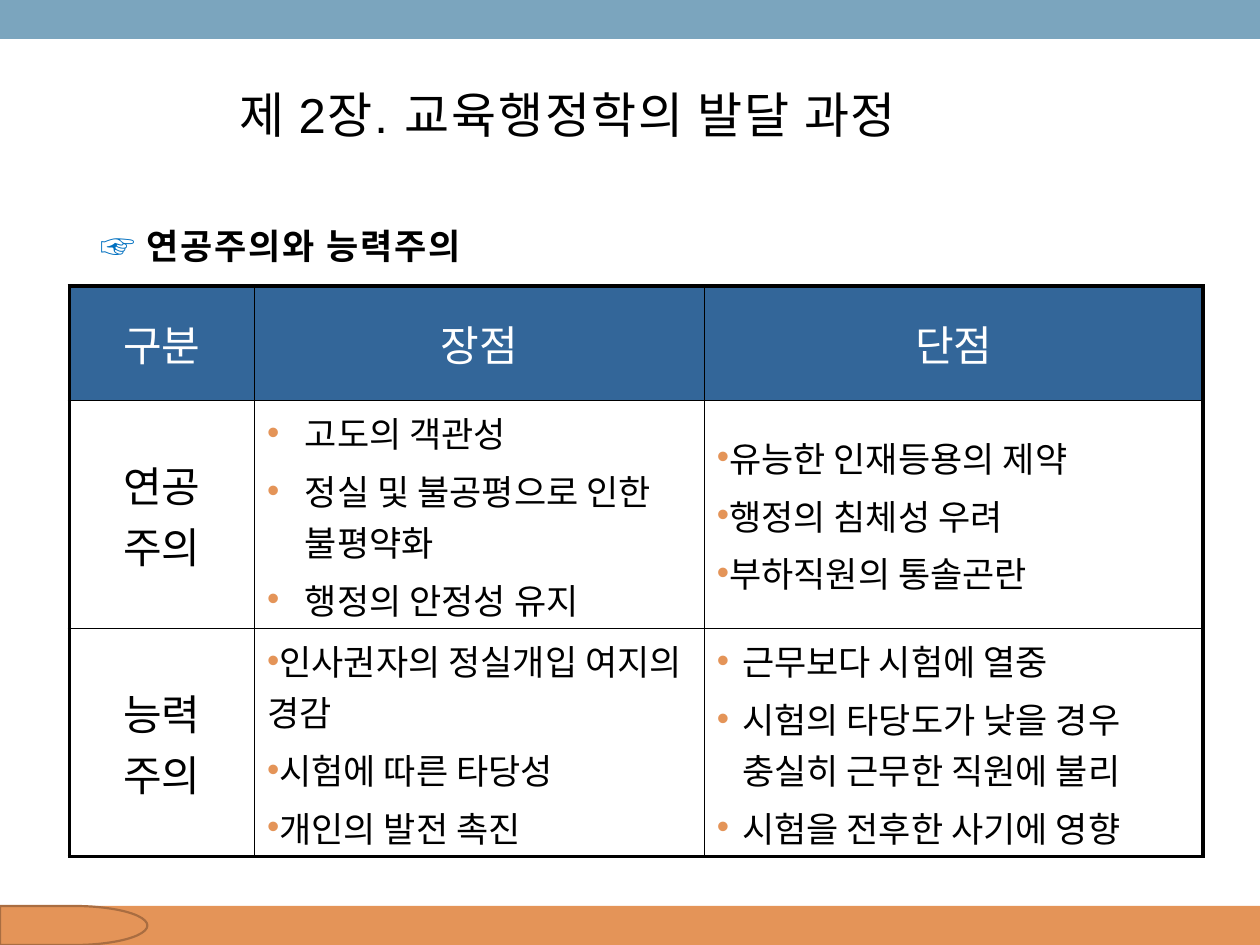
from lxml import etree
from pptx import Presentation
from pptx import util as u
from pptx.dml.color import RGBColor
from pptx.enum import shapes, text
from pptx.oxml.ns import qn

# Content
TITLE = "제 2장. 교육행정학의 발달 과정"
POINTER, SUBTITLE = "☞ ", "연공주의와 능력주의"
HEADERS = ["구분", "장점", "단점"]
# Each row: label, then (hanging indent in inches, bullet points) per column
ROWS = [
    ("연공\v주의",
     (0.3, ["고도의 객관성", "정실 및 불공평으로 인한 불평약화", "행정의 안정성 유지"]),
     (0, ["유능한 인재등용의 제약", "행정의 침체성 우려", "부하직원의 통솔곤란"])),
    ("능력\v주의",
     (0, ["인사권자의 정실개입 여지의 경감", "시험에 따른 타당성", "개인의 발전 촉진"]),
     (0.2, ["근무보다 시험에 열중", "시험의 타당도가 낮을 경우 충실히 근무한 직원에 불리",
            "시험을 전후한 사기에 영향"])),
]
COLUMN_WIDTHS = [1.47, 3.57, 3.96]
ROW_HEIGHTS = [0.91, 1.81, 1.81]
COLORS = {"orange": "E49458", "brown": "A96D41", "sky": "7BA5BE", "header": "336699",
          "pointer": "0070C0", "black": "000000", "white": "FFFFFF"}
KOREAN = "Noto Sans CJK KR"
SLIDE_WIDTH, SLIDE_HEIGHT, BAND = 10, 7.5, 0.31


def rgb(name):
    return RGBColor.from_string(COLORS[name])


def child(parent, tag, **attributes):
    return etree.SubElement(parent, qn(tag), attributes)


def style_run(run, size, color="black", bold=False, font=KOREAN, spacing=None):
    run.font.size, run.font.bold, run.font.name = u.Pt(size), bold, font
    run.font.color.rgb = rgb(color)
    properties = run._r.get_or_add_rPr()
    child(properties, "a:ea", typeface=KOREAN)
    if spacing:
        properties.set("spc", str(spacing * 100))


def add_block(slide, kind, left, top, width, color, line=None):
    shape = slide.shapes.add_shape(kind, *map(u.Inches, (left, top, width, BAND)))
    shape.shadow.inherit = False
    shape.fill.solid()
    shape.fill.fore_color.rgb = rgb(color)
    if line:
        shape.line.color.rgb, shape.line.width = rgb(line), u.Pt(1.25)
    else:
        shape.line.fill.background()


def add_text(slide, left, top, width, height, anchor):
    frame = slide.shapes.add_textbox(*map(u.Inches, (left, top, width, height))).text_frame
    frame.word_wrap, frame.vertical_anchor = True, anchor
    return frame.paragraphs[0]


def fill_cell(cell, lines, size, color="black", indent=None):
    """Write the lines; an indent makes them bullets, otherwise they are centred."""
    cell.vertical_anchor = text.MSO_ANCHOR.MIDDLE
    cell.text_frame.text = "\n".join(lines)
    for paragraph in cell.text_frame.paragraphs:
        bulleted = indent is not None
        paragraph.alignment = text.PP_ALIGN.LEFT if bulleted else text.PP_ALIGN.CENTER
        properties = paragraph._p.get_or_add_pPr()
        child(child(properties, "a:spcBef"), "a:spcPct", val="20000")
        if bulleted:
            properties.set("marL", str(u.Inches(indent)))
            properties.set("indent", str(-u.Inches(indent)))
            child(child(properties, "a:buClr"), "a:srgbClr", val=COLORS["orange"])
            child(properties, "a:buFont", typeface="Arial")
            child(properties, "a:buChar", char="•")
        for run in paragraph.runs:
            style_run(run, size, color)


def set_borders(cell, outer_sides):
    properties = cell._tc.get_or_add_tcPr()
    for position, side in enumerate("LRTB"):
        width = u.Pt(2.25 if side in outer_sides else 1)
        line = etree.Element(qn(f"a:ln{side}"), w=str(width))
        child(child(line, "a:solidFill"), "a:srgbClr", val=COLORS["black"])
        properties.insert(position, line)


def add_comparison_table(slide):
    row_count, column_count = len(ROW_HEIGHTS), len(COLUMN_WIDTHS)
    frame = slide.shapes.add_table(
        row_count, column_count, u.Inches(0.55), u.Inches(2.27),
        u.Inches(sum(COLUMN_WIDTHS)), u.Inches(sum(ROW_HEIGHTS)))
    table = frame.table
    table.horz_banding = False
    for column, width in zip(table.columns, COLUMN_WIDTHS):
        column.width = u.Inches(width)
    for row, height in zip(table.rows, ROW_HEIGHTS):
        row.height = u.Inches(height)

    for index, header in enumerate(HEADERS):
        fill_cell(table.cell(0, index), [header], 24, "white")
    for row, (label, *lists) in enumerate(ROWS, 1):
        fill_cell(table.cell(row, 0), [label], 24)
        for column, (indent, points) in enumerate(lists, 1):
            fill_cell(table.cell(row, column), points, 20, indent=indent)

    # Header fill, thick outer frame, thin inner lines
    for row in range(row_count):
        for column in range(column_count):
            cell = table.cell(row, column)
            if row == 0:
                cell.fill.solid()
                cell.fill.fore_color.rgb = rgb("header")
            else:
                cell.fill.background()
            edges = {"L": column == 0, "R": column == column_count - 1,
                     "T": row == 0, "B": row == row_count - 1}
            set_borders(cell, [side for side, outer in edges.items() if outer])


def main():
    presentation = Presentation()
    presentation.slide_width = u.Inches(SLIDE_WIDTH)
    presentation.slide_height = u.Inches(SLIDE_HEIGHT)
    slide = presentation.slides.add_slide(presentation.slide_layouts[6])

    # Bands at the bottom and top
    bottom = SLIDE_HEIGHT - BAND
    add_block(slide, shapes.MSO_SHAPE.RECTANGLE, 0, bottom, SLIDE_WIDTH, "orange")
    add_block(slide, shapes.MSO_SHAPE.RECTANGLE, 0, 0, SLIDE_WIDTH, "sky")

    # Subtitle with pointer
    subtitle = add_text(slide, 0, 1.64, 4.45, 0.61, text.MSO_ANCHOR.MIDDLE)
    subtitle.alignment = text.PP_ALIGN.CENTER
    for words, color, bold in [(POINTER, "pointer", False), (SUBTITLE, "black", True)]:
        run = subtitle.add_run()
        run.text = words
        style_run(run, 20, color, bold, spacing=1)

    add_comparison_table(slide)

    # Corner tab and chapter title
    add_block(slide, shapes.MSO_SHAPE.FLOWCHART_DELAY, 0, bottom, 1.17, "orange", "brown")
    title = add_text(slide, 1.8, 0.62, 6.33, 0.94, text.MSO_ANCHOR.TOP)
    title.text = TITLE
    style_run(title.runs[0], 28, font="Arial", spacing=1)

    presentation.save("out.pptx")


if __name__ == "__main__":
    main()
